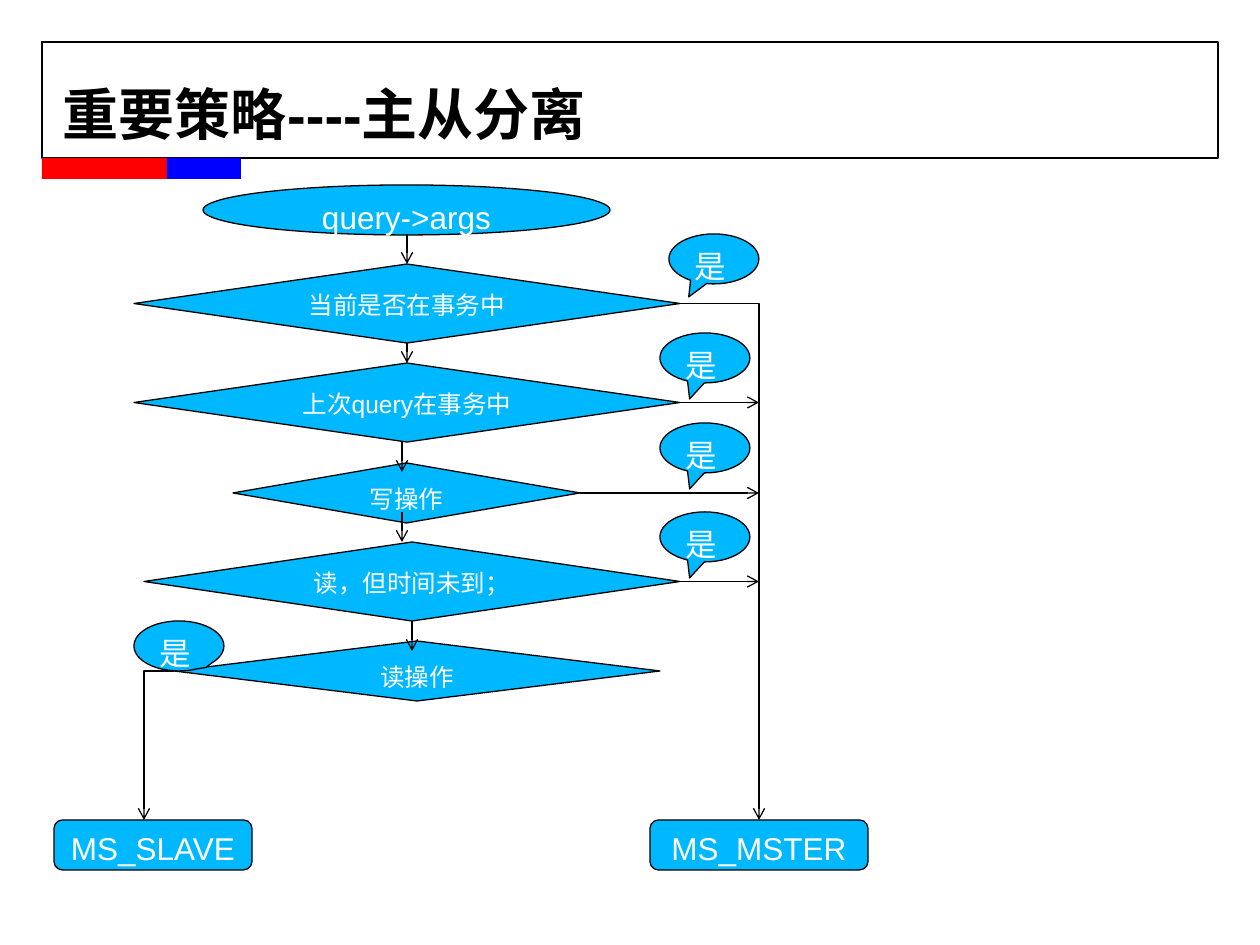
from lxml import etree
from pptx import Presentation
from pptx import util as u
from pptx.dml.color import RGBColor
from pptx.enum import shapes, text
from pptx.oxml.ns import qn

PX = 914400 / 126
COLORS = {"ink": "000000", "node": "00B8FF", "label": "FFFFFF",
          "red": "FF0000", "blue": "0000FF"}
KIND = shapes.MSO_SHAPE
CENTER = text.PP_ALIGN.CENTER

TITLE = "重要策略----主从分离"
FRAME = (42, 42, 1176, 116)
BARS = [("red", (42, 158, 149, 21)), ("blue", (167, 158, 74, 21))]
START = ("query->args", (203, 185, 407, 50))
DECISIONS = [
    ("当前是否在事务中", (134, 264, 546, 79)),
    ("上次query在事务中", (134, 363, 546, 79)),
    ("写操作", (233, 463, 347, 60)),
    ("读，但时间未到；", (144, 542, 536, 79)),
    ("读操作", (174, 641, 486, 60)),
]
RESULTS = [("MS_SLAVE", (54, 820, 198, 50)), ("MS_MSTER", (650, 820, 218, 50))]
SLAVE_X, MASTER_X, RESULT_TOP = 144, 759, 820
# left, top, pointer offset as shares of the balloon's size
YES_BALLOONS = [
    (669, 234, (-0.28, 0.76)),
    (660, 333, (-0.17, 0.82)),
    (660, 423, (-0.17, 0.82)),
    (660, 512, (-0.17, 0.82)),
    (134, 621, (0.3, 0.43)),
]
# x, top, bottom
DOWN_ARROWS = [(407, 234, 264), (407, 343, 363), (402, 442, 472),
               (402, 512, 542), (412, 621, 651)]


def px(*values):
    return [u.Emu(round(value * PX)) for value in values]


def rgb(name):
    return RGBColor.from_string(COLORS[name])


def write(shape, words, size=18, color="label", bold=False, align=None,
          anchor=text.MSO_ANCHOR.TOP, spacing=None):
    frame = shape.text_frame
    frame.word_wrap = True
    frame.vertical_anchor = anchor
    para = frame.paragraphs[0]
    para.alignment = align or text.PP_ALIGN.LEFT
    para.line_spacing = spacing
    span = para.add_run()
    span.text = words
    span.font.name = "Arial"
    span.font.size = u.Pt(size)
    span.font.bold = bold
    span.font.color.rgb = rgb(color)


def add_shape(slide, kind, place, fill="node", line="ink"):
    shape = slide.shapes.add_shape(kind, *px(*place))
    shape.shadow.inherit = False
    if fill:
        shape.fill.solid()
        shape.fill.fore_color.rgb = rgb(fill)
    else:
        shape.fill.background()
    if line:
        shape.line.color.rgb = rgb(line)
        shape.line.width = u.Pt(0.75)
    else:
        shape.line.fill.background()
    return shape


def add_arrow(slide, start, end, bent=False):
    """Draw an arrow; a bent one runs sideways first, then down."""
    kind = shapes.MSO_CONNECTOR.ELBOW if bent else shapes.MSO_CONNECTOR.STRAIGHT
    arrow = slide.shapes.add_connector(kind, *px(*start, *end))
    arrow.line.color.rgb = rgb("ink")
    arrow.line.width = u.Pt(0.75)
    props = arrow._element.spPr
    if bent:
        props.find(qn("a:prstGeom")).set("prst", "bentConnector2")
    etree.SubElement(props.find(qn("a:ln")), qn("a:tailEnd"), type="arrow")
    etree.SubElement(props, qn("a:effectLst"))


def add_header(slide):
    add_shape(slide, KIND.RECTANGLE, FRAME, fill=None)
    for color, place in BARS:
        add_shape(slide, KIND.RECTANGLE, place, fill=color, line=None)
    box = slide.shapes.add_textbox(*px(63, 38, 1134, 157))
    frame = box.text_frame
    frame.margin_left = frame.margin_right = 0
    frame.margin_top = frame.margin_bottom = 0
    write(box, TITLE, size=32, color="ink", bold=True,
          anchor=text.MSO_ANCHOR.MIDDLE, spacing=0.93)


def add_flow(slide):
    nodes = [(KIND.OVAL, 18, START)]
    nodes += [(KIND.DIAMOND, 14, item) for item in DECISIONS]
    nodes += [(KIND.ROUNDED_RECTANGLE, 18, item) for item in RESULTS]
    for kind, size, (words, place) in nodes:
        write(add_shape(slide, kind, place), words, size=size, align=CENTER)

    for index, (_, (left, top, width, height)) in enumerate(DECISIONS):
        middle = top + height / 2
        if index == 0:
            add_arrow(slide, (left + width, middle), (MASTER_X, RESULT_TOP), bent=True)
        elif index == len(DECISIONS) - 1:
            add_arrow(slide, (left, middle), (SLAVE_X, RESULT_TOP), bent=True)
        else:
            add_arrow(slide, (left + width, middle), (MASTER_X, middle))

    for left, top, pointer in YES_BALLOONS:
        balloon = add_shape(slide, KIND.OVAL_CALLOUT, (left, top, 90, 50))
        balloon.adjustments[0], balloon.adjustments[1] = pointer
        write(balloon, "是")

    for x, top, bottom in DOWN_ARROWS:
        add_arrow(slide, (x, top), (x, bottom))


def main():
    deck = Presentation()
    deck.slide_width, deck.slide_height = px(1260, 945)
    slide = deck.slides.add_slide(deck.slide_layouts[6])
    add_header(slide)
    add_flow(slide)
    deck.save("out.pptx")


if __name__ == "__main__":
    main()
